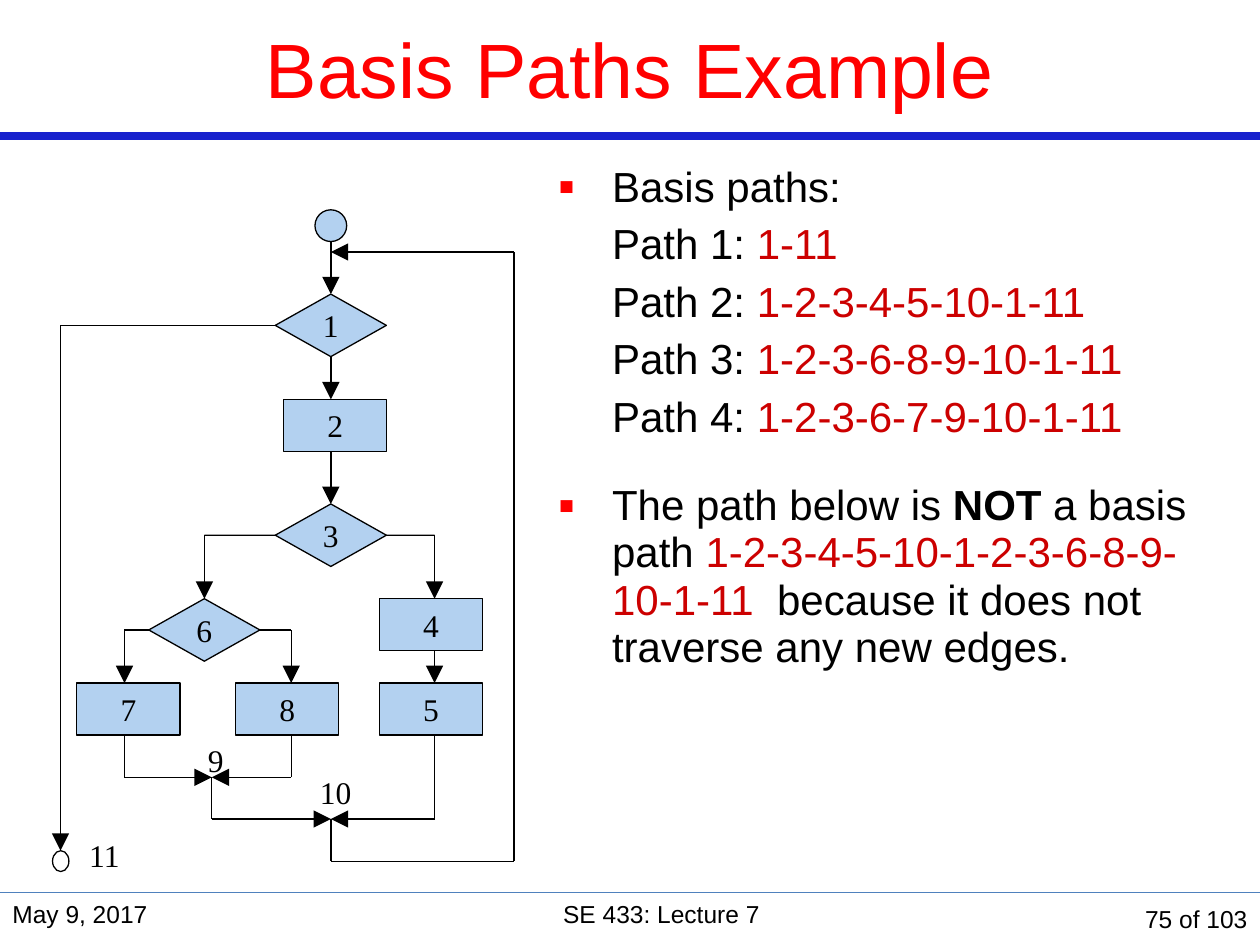
import lxml.etree
import pptx
import pptx.dml.color
import pptx.enum.shapes
import pptx.enum.text
import pptx.oxml.ns
import pptx.util

Cm = pptx.util.Cm
Pt = pptx.util.Pt
qn = pptx.oxml.ns.qn
SHAPE = pptx.enum.shapes.MSO_SHAPE
ALIGN = pptx.enum.text.PP_ALIGN
ANCHOR = pptx.enum.text.MSO_ANCHOR


def color(value):
    return pptx.dml.color.RGBColor.from_string(value)


def style(span, size, font, value):
    span.font.size = Pt(size)
    span.font.name = font
    span.font.color.rgb = color(value)


deck = pptx.Presentation()
deck.slide_width = Cm(25.4)
deck.slide_height = Cm(19.05)
page = deck.slides.add_slide(deck.slide_layouts[6])
flow = page.shapes.add_group_shape()

nodes = [
    ("1", SHAPE.DIAMOND, 5.55, 5.93),
    ("2", SHAPE.RECTANGLE, 5.72, 8.05),
    ("3", SHAPE.DIAMOND, 5.55, 10.16),
    ("6", SHAPE.DIAMOND, 3, 12.07),
    ("4", SHAPE.RECTANGLE, 7.65, 12.07),
    ("5", SHAPE.RECTANGLE, 7.65, 13.77),
    ("7", SHAPE.RECTANGLE, 1.55, 13.77),
    ("8", SHAPE.RECTANGLE, 4.75, 13.77),
]
sizes = {SHAPE.DIAMOND: (2.24, 1.26), SHAPE.RECTANGLE: (2.08, 1.05)}
sites = {}
for label, kind, left, top in nodes:
    width, height = sizes[kind]
    node = flow.shapes.add_shape(kind, Cm(left), Cm(top), Cm(width), Cm(height))
    node.shadow.inherit = False
    node.fill.solid()
    node.fill.fore_color.rgb = color("B3D1F0")
    node.line.color.rgb = color("000000")
    node.line.width = Pt(0.75)
    node.text_frame.text = label
    node.text_frame.word_wrap = False
    node.text_frame.vertical_anchor = ANCHOR.MIDDLE
    para = node.text_frame.paragraphs[0]
    para.alignment = ALIGN.CENTER
    style(para.runs[0], 18, "Times New Roman", "000000")
    middle_x, middle_y = left + width / 2, top + height / 2
    corners = [(middle_x, top), (left, middle_y), (middle_x, top + height), (left + width, middle_y)]
    for index, (x, y) in enumerate(corners):
        sites[round(x, 2), round(y, 2)] = node, index

for left, top, width, height, fill in [(6.35, 4.23, 0.64, 0.64, "B3D1F0"), (1.06, 17.15, 0.33, 0.42, None)]:
    terminal = flow.shapes.add_shape(SHAPE.OVAL, Cm(left), Cm(top), Cm(width), Cm(height))
    terminal.shadow.inherit = False
    terminal.line.color.rgb = color("000000")
    terminal.line.width = Pt(0.75)
    if fill:
        terminal.fill.solid()
        terminal.fill.fore_color.rgb = color(fill)
    else:
        terminal.fill.background()

routes = [
    ([(6.67, 4.87), (6.67, 5.93)], True),
    ([(6.67, 7.19), (6.67, 8.05)], True),
    ([(6.67, 9.1), (6.67, 10.16)], True),
    ([(5.55, 10.79), (4.12, 10.79), (4.12, 12.07)], True),
    ([(7.79, 10.79), (8.76, 10.79), (8.76, 12.07)], True),
    ([(8.76, 13.12), (8.76, 13.77)], True),
    ([(3, 12.7), (2.51, 12.7), (2.51, 13.77)], True),
    ([(5.24, 12.7), (5.87, 12.7), (5.87, 13.77)], True),
    ([(2.51, 14.82), (2.51, 15.67), (4.27, 15.67)], True),
    ([(5.87, 14.82), (5.87, 15.67), (4.27, 15.67)], True),
    ([(4.27, 15.67), (4.27, 16.51), (6.67, 16.51)], True),
    ([(8.76, 14.82), (8.76, 16.51), (6.67, 16.51)], True),
    ([(6.67, 16.51), (6.67, 17.36), (10.36, 17.36), (10.36, 5.08), (6.67, 5.08)], True),
    ([(5.55, 6.56), (1.22, 6.56), (1.22, 17.15)], True),
]
segments = []
for points, arrow in routes:
    for start, end in zip(points, points[1:]):
        segments.append((flow, start, end, "000000", 0.75, arrow and end == points[-1]))
segments.append((page, (0, 2.74), (25.4, 2.74), "1822CD", 4.5, False))
segments.append((page, (0, 17.99), (25.4, 17.99), "4F81BD", 0.75, False))

for owner, start, end, stroke, weight, arrow in segments:
    line = owner.shapes.add_connector(
        pptx.enum.shapes.MSO_CONNECTOR.STRAIGHT, Cm(start[0]), Cm(start[1]), Cm(end[0]), Cm(end[1])
    )
    if start in sites:
        line.begin_connect(*sites[start])
    if end in sites:
        line.end_connect(*sites[end])
    line.line.color.rgb = color(stroke)
    line.line.width = Pt(weight)
    if arrow:
        outline = line.line._get_or_add_ln()
        lxml.etree.SubElement(outline, qn("a:tailEnd"), type="triangle", w="lg", len="lg")
    lxml.etree.SubElement(line._element.spPr, qn("a:effectLst"))

BLACK, RED = "000000", "FF0000"
SERIF, SANS = "Times New Roman", "Arial"
captions = [
    (flow, "9", 3.94, 14.82, 0.64, 1.02, 18, SERIF, BLACK, ALIGN.LEFT, ANCHOR.TOP),
    (flow, "10", 6.2, 15.45, 1.63, 1.02, 18, SERIF, BLACK, ALIGN.LEFT, ANCHOR.TOP),
    (flow, "11", 1.55, 16.72, 1.63, 1.02, 18, SERIF, BLACK, ALIGN.LEFT, ANCHOR.TOP),
    (page, "Basis Paths Example", 0, 0, 25.4, 2.74, 44, SANS, RED, ALIGN.CENTER, ANCHOR.MIDDLE),
    (page, "May 9, 2017", 0, 17.99, 5.5, 1.06, 14, SANS, BLACK, ALIGN.LEFT, ANCHOR.TOP),
    (page, "SE 433: Lecture 7", 5.5, 17.99, 15.67, 1.06, 14, SANS, BLACK, ALIGN.CENTER, ANCHOR.TOP),
    (page, "75 of 103", 21.17, 17.99, 4.23, 1.06, 14, SANS, BLACK, ALIGN.RIGHT, ANCHOR.MIDDLE),
]
for owner, text, left, top, width, height, size, font, ink, align, anchor in captions:
    box = owner.shapes.add_textbox(Cm(left), Cm(top), Cm(width), Cm(height))
    box.text_frame.text = text
    box.text_frame.word_wrap = True
    box.text_frame.vertical_anchor = anchor
    para = box.text_frame.paragraphs[0]
    para.alignment = align
    style(para.runs[0], size, font, ink)

body = page.shapes.add_textbox(Cm(11), Cm(2.97), Cm(13.54), Cm(15.04))
body.text_frame.word_wrap = True
paths = ["1-11", "1-2-3-4-5-10-1-11", "1-2-3-6-8-9-10-1-11", "1-2-3-6-7-9-10-1-11"]
listing = [("Basis paths:", BLACK)]
for number, path in enumerate(paths, 1):
    listing += [("\v", None), (f"Path {number}: ", BLACK), (path, "CC0000")]
remark = [
    ("The path below is ", BLACK),
    ("NOT", BLACK),
    (" a basis path ", BLACK),
    ("1-2-3-4-5-10-1-2-3-6-8-9-10-1-11  ", "CC0000"),
    ("because it does not traverse any new edges.", BLACK),
]
paras = [body.text_frame.paragraphs[0], body.text_frame.add_paragraph()]
for para, pieces, spacing in zip(paras, [listing, remark], [1.14, 0.94]):
    para.line_spacing = spacing
    para.space_before = Pt(12)
    para.space_after = Pt(12)
    for text, ink in pieces:
        if text == "\v":
            para.add_line_break()
            continue
        span = para.add_run()
        span.text = text
        style(span, 24, SANS, ink)
        span.font.bold = text == "NOT"
    props = para._p.get_or_add_pPr()
    props.set("marL", str(Cm(1.09)))
    props.set("indent", str(-Cm(1.09)))
    bullet = lxml.etree.SubElement(props, qn("a:buClr"))
    lxml.etree.SubElement(bullet, qn("a:srgbClr"), val=RED)
    lxml.etree.SubElement(props, qn("a:buSzPct"), val="114000")
    lxml.etree.SubElement(props, qn("a:buFont"), typeface=SANS)
    lxml.etree.SubElement(props, qn("a:buChar"), char="▪")

deck.save("out.pptx")
